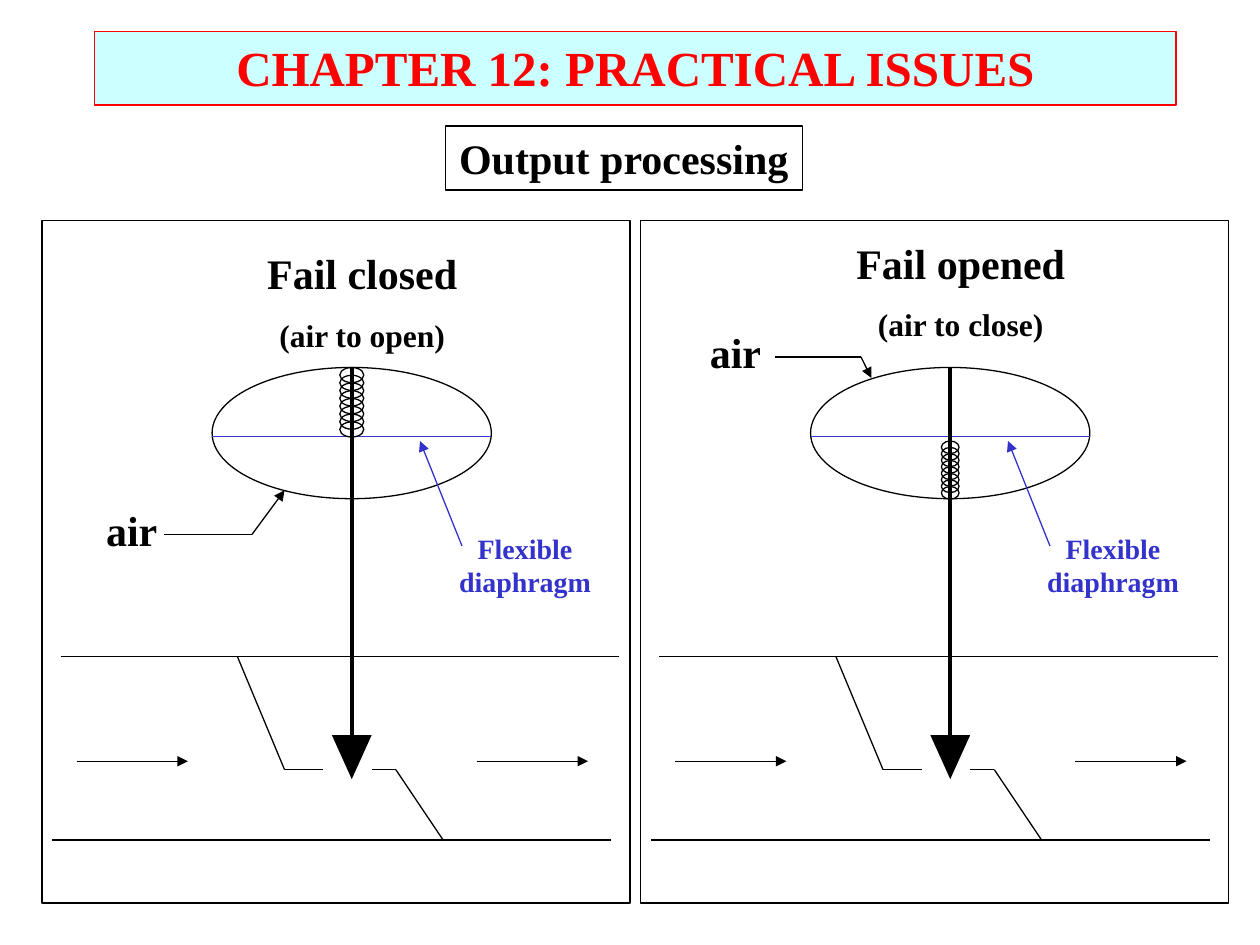
"""Build the slide that compares fail-closed and fail-opened control valves."""
from dataclasses import dataclass

from lxml.etree import SubElement
from pptx import Presentation
from pptx.dml.color import RGBColor
from pptx.enum.dml import MSO_LINE
from pptx.enum.shapes import MSO_CONNECTOR as Link, MSO_SHAPE as Shape
from pptx.enum.text import MSO_ANCHOR as Anchor, MSO_AUTO_SIZE as AutoSize, PP_ALIGN as Align
from pptx.oxml.ns import qn
from pptx.util import Inches, Pt

BLACK = RGBColor(0x00, 0x00, 0x00)
RED = RGBColor(0xFF, 0x00, 0x00)
BLUE = RGBColor(0x33, 0x33, 0xCC)
CYAN = RGBColor(0xCC, 0xFF, 0xFF)
FONT = "Times New Roman"
COLUMNS, ROWS = 120, 90
CELL = Inches(10) / COLUMNS
THIN, THICK = 0.75, 2.25
COIL_TURNS = 8
AXIS = 29.5


@dataclass
class Box:
    """A rectangle measured in grid columns and rows."""
    left: float
    top: float
    width: float
    height: float

    def inner(self, left, top, width, height):
        """Return a box placed relative to this one."""
        return Box(self.left + left, self.top + top, width, height)

    def point(self, x, y):
        """Return a grid point relative to this box as slide lengths."""
        return round((self.left + x) * CELL), round((self.top + y) * CELL)

    def lengths(self):
        """Return left, top, width and height as slide lengths."""
        return [round(n * CELL) for n in (self.left, self.top, self.width, self.height)]


@dataclass
class Valve:
    """The parts in which the two valves differ."""
    heading: str
    action: str
    heading_top: float
    coil_top: float
    coil_width: float
    coil_height: float
    coil_step: float
    air_label: tuple
    air_route: list
    label_left: float


FAIL_CLOSED = Valve("Fail closed", "(air to open)", 2, 14, 2.28, 1.44, 0.74,
                    (4, 26.5), [(11.6, 29.9), (20, 29.9), (23.1, 25.7)], 38)
FAIL_OPENED = Valve("Fail opened", "(air to close)", 1, 21, 1.68, 1.2, 0.62,
                    (4.5, 9.5), [(12.8, 13), (21, 13), (22, 15)], 37)


def write(frame, *lines, sizes=(24,), color=BLACK, anchor=Anchor.TOP, wrap=True):
    """Fill a text frame with centred bold lines, one size for each."""
    frame.word_wrap = wrap
    frame.auto_size = AutoSize.NONE
    frame.vertical_anchor = anchor
    for index, (line, size) in enumerate(zip(lines, sizes)):
        para = frame.add_paragraph() if index else frame.paragraphs[0]
        para.alignment = Align.CENTER
        para.space_before = Pt(10 if index else 0)
        span = para.add_run()
        span.text = line
        span.font.name, span.font.size = FONT, Pt(size)
        span.font.bold = True
        span.font.color.rgb = color


def add_label(page, box, *lines, **style):
    """Add a text box with formatted lines."""
    write(page.shapes.add_textbox(*box.lengths()).text_frame, *lines, **style)


def add_outline(shapes, kind, box, fill=None, line=BLACK):
    """Add a preset shape with an optional fill and line."""
    shape = shapes.add_shape(kind, *box.lengths())
    shape.shadow.inherit = False
    if fill is None:
        shape.fill.background()
    else:
        shape.fill.solid()
        shape.fill.fore_color.rgb = fill
    if line is None:
        shape.line.fill.background()
    else:
        shape.line.color.rgb = line
        shape.line.width = Pt(THIN)
    return shape


def add_route(page, box, points, color=BLACK, width=THIN, arrow=False):
    """Draw straight lines through the points, with an arrowhead at the end if asked."""
    legs = list(zip(points, points[1:]))
    for index, (start, end) in enumerate(legs):
        leg = page.shapes.add_connector(Link.STRAIGHT, *box.point(*start), *box.point(*end))
        leg.line.color.rgb = color
        leg.line.width = Pt(width)
        leg.line.dash_style = MSO_LINE.SOLID
        properties = leg.line._get_or_add_ln()
        if arrow and index == len(legs) - 1:
            SubElement(properties, qn("a:tailEnd"), type="triangle")
        SubElement(properties.getparent(), qn("a:effectLst"))


def add_header(page, box):
    """Format the title placeholder and add the topic box below it."""
    title = page.shapes.title
    title.left, title.top, title.width, title.height = box.lengths()
    title.fill.solid()
    title.fill.fore_color.rgb = CYAN
    title.line.color.rgb = RED
    title.line.width = Pt(THIN)
    write(title.text_frame, "CHAPTER 12: PRACTICAL ISSUES", sizes=(28,), color=RED)
    topic = add_outline(page.shapes, Shape.RECTANGLE, box.inner(33.4, 9, 34, 6.1))
    write(topic.text_frame, "Output processing", anchor=Anchor.MIDDLE, wrap=False)


def add_actuator(page, box, valve):
    """Draw the diaphragm housing, spring, stem, plug and air supply."""
    add_outline(page.shapes, Shape.OVAL, box.inner(AXIS - 13.3, 14, 26.6, 12.5))
    add_route(page, box, [(AXIS - 13.3, 20.6), (AXIS + 13.3, 20.6)], color=BLUE)
    spring = page.shapes.add_group_shape()
    for turn in range(COIL_TURNS):
        coil = box.inner(AXIS - valve.coil_width / 2, valve.coil_top + turn * valve.coil_step,
                         valve.coil_width, valve.coil_height)
        add_outline(spring.shapes, Shape.OVAL, coil)
    add_route(page, box, [(AXIS, 14), (AXIS, 49)], width=THICK)
    plug = add_outline(page.shapes, Shape.ISOSCELES_TRIANGLE,
                       box.inner(AXIS - 1.9, 49, 3.8, 4.2), fill=BLACK, line=None)
    plug.rotation = 180
    add_route(page, box, valve.air_route, arrow=True)
    add_label(page, box.inner(*valve.air_label, 9.1, 6), "air")


def add_pipe(page, box):
    """Draw the pipe walls, the valve seat and the flow arrows."""
    for wall in ([(1.8, 41.5), (55, 41.5)], [(1, 59), (54.2, 59)],
                 [(18.6, 41.5), (23.1, 52.3), (26.8, 52.3)],
                 [(31.4, 52.3), (33.7, 52.3), (38.2, 59)]):
        add_route(page, box, wall)
    for start in (3.3, 41.4):
        add_route(page, box, [(start, 51.5), (start + 10.6, 51.5)], arrow=True)


def add_panel(page, box, valve):
    """Draw one framed valve with its heading and diaphragm label."""
    add_actuator(page, box, valve)
    add_pipe(page, box)
    add_label(page, box.inner(14, valve.heading_top, 33, 11.4),
              valve.heading, valve.action, sizes=(24, 18))
    add_outline(page.shapes, Shape.RECTANGLE, box)
    left = valve.label_left
    add_label(page, box.inner(left, 29, 16, 7.7), "Flexible diaphragm", sizes=(16,), color=BLUE)
    add_route(page, box, [(left + 2, 31), (left - 2, 21)], color=BLUE, arrow=True)


def main():
    """Build and save the deck."""
    deck = Presentation()
    deck.slide_width, deck.slide_height = round(COLUMNS * CELL), round(ROWS * CELL)
    page = deck.slides.add_slide(deck.slide_layouts[5])
    add_header(page, Box(9, 3, 103, 7))
    for index, valve in enumerate((FAIL_CLOSED, FAIL_OPENED)):
        add_panel(page, Box(4 + 57 * index, 21, 56, 65), valve)
    deck.save("out.pptx")


if __name__ == "__main__":
    main()
